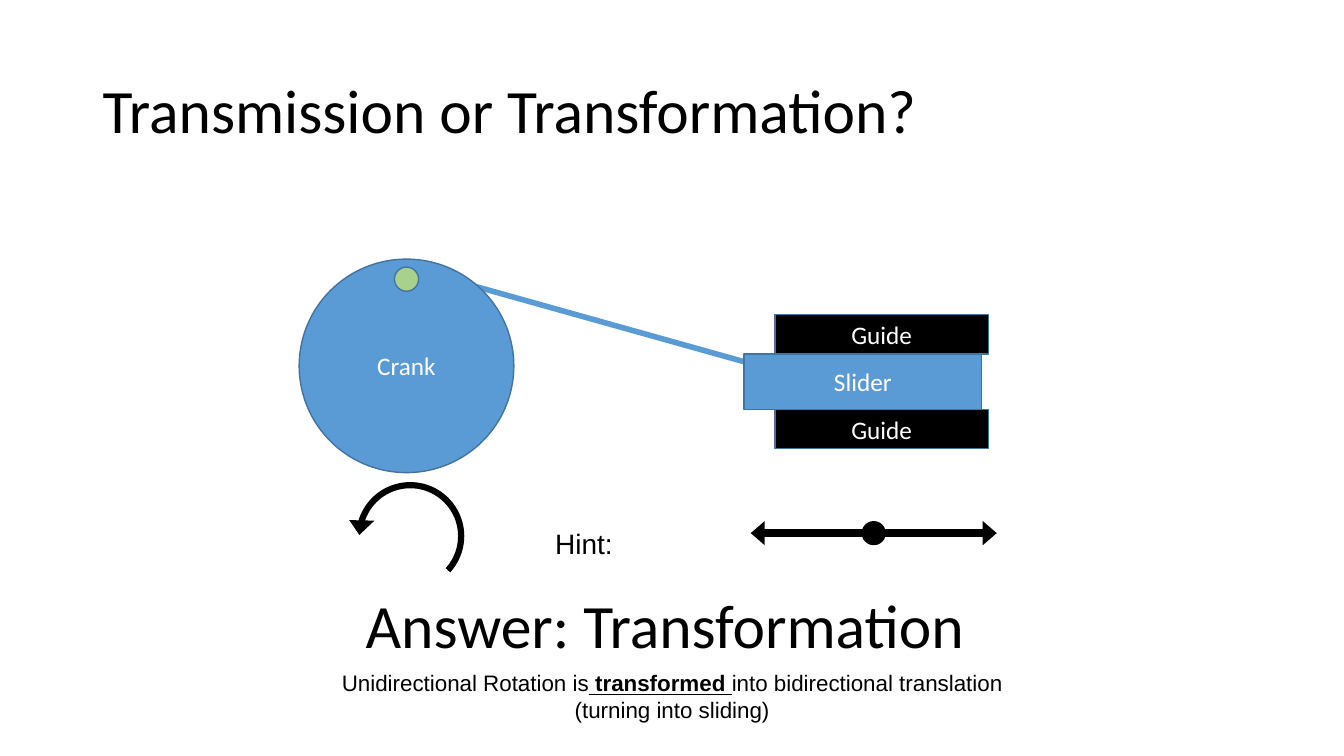
from lxml.etree import SubElement
from pptx import Presentation
from pptx.dml.color import RGBColor
from pptx.enum.shapes import MSO_CONNECTOR as Link, MSO_SHAPE as Kind
from pptx.enum.text import MSO_ANCHOR as Anchor, PP_ALIGN as Align
from pptx.oxml.ns import qn
from pptx.util import Cm, Pt

HUES = {"blue": "5B9BD5", "edge": "43739E", "green": "A9D18E",
        "black": "000000", "white": "FFFFFF"}
DOT = 0.61


def hue(name):
    return RGBColor.from_string(HUES[name])


def style(para, size, face, color="black", align=Align.CENTER):
    para.alignment = align
    para.font.size = Pt(size)
    para.font.name = face
    para.font.color.rgb = hue(color)


def shape(slide, kind, box, fill, edge=None, label=None, adjust=()):
    item = slide.shapes.add_shape(kind, *map(Cm, box))
    item.shadow.inherit = False
    item.fill.solid()
    item.fill.fore_color.rgb = hue(fill)
    if edge:
        item.line.color.rgb = hue(edge)
        item.line.width = Pt(1)
    else:
        item.line.fill.background()
    for i, value in enumerate(adjust):
        item.adjustments[i] = value
    if label:
        frame = item.text_frame
        frame.vertical_anchor = Anchor.MIDDLE
        frame.text = label
        style(frame.paragraphs[0], 18, "Calibri", "white")
    return item


def text(slide, box, words, size, face, align=Align.CENTER,
         anchor=Anchor.MIDDLE, wrap=True):
    frame = slide.shapes.add_textbox(*map(Cm, box)).text_frame
    frame.word_wrap = wrap
    frame.vertical_anchor = anchor
    frame.text = words
    for para in frame.paragraphs:
        style(para, size, face, align=align)
    return frame


def title(slide, box):
    frame = text(slide, box, "Transmission or Transformation?", 44,
                 "Calibri", Align.LEFT)
    frame.paragraphs[0].line_spacing = 0.9


def rod(slide, box):
    """Draw the rod down the diagonal of the box."""
    x, y, w, h = box
    line = slide.shapes.add_connector(
        Link.STRAIGHT, Cm(x), Cm(y), Cm(x + w), Cm(y + h))
    line.line.color.rgb = hue("blue")
    line.line.width = Pt(4)
    SubElement(line._element.spPr, qn("a:effectLst"))


def crank(slide, box):
    """Draw the wheel with its pin near the top."""
    x, y, w, h = box
    shape(slide, Kind.OVAL, box, "blue", "edge", "Crank")
    pin = (x + (w - DOT) / 2, y + 0.2, DOT, DOT)
    shape(slide, Kind.OVAL, pin, "green", "edge")


def slider(slide, box):
    """Draw the slider between two guides, over a white field."""
    x, y, w, h = box
    field = (x + 1.77, y - 2.6, 8.41, 7.39)
    shape(slide, Kind.RECTANGLE, field, "white")
    shape(slide, Kind.RECTANGLE, box, "blue", "edge", "Slider")
    deep = 0.99
    for top in (y - deep, y + h):
        shape(slide, Kind.RECTANGLE, (x + 0.78, top, 5.38, deep),
              "black", "edge", "Guide")


def turn(slide, box):
    arrow = shape(slide, Kind.CIRCULAR_ARROW, box, "black",
                  adjust=(0.049, 10.007, 205.217, 82.682, 0.099))
    arrow._element.spPr.xfrm.set("flipH", "1")


def travel(slide, box):
    """Draw the two-way arrow with a dot at its centre."""
    x, y, w, h = box
    shape(slide, Kind.LEFT_RIGHT_ARROW, box, "black", adjust=(0.321, 0.579))
    shape(slide, Kind.OVAL, (x + (w - h) / 2, y, h, h), "black")


def answer(slide, box):
    """Write the answer with its reason below."""
    x, y, w, h = box
    text(slide, (x, y, w, 2.79), "Answer: Transformation", 44, "Calibri")
    note = (x + 2.21, y + 2.41, 18.8, h - 2.41)
    frame = text(slide, note, "\n(turning into sliding)", 16, "Arial",
                 anchor=Anchor.TOP)
    first = frame.paragraphs[0]
    for words, strong in (("Unidirectional Rotation is", False),
                          (" transformed ", True),
                          ("into bidirectional translation", False)):
        run = first.add_run()
        run.text = words
        if strong:
            run.font.bold = run.font.underline = True


def main():
    deck = Presentation()
    deck.slide_width, deck.slide_height = Cm(33.87), Cm(19.05)
    slide = deck.slides.add_slide(deck.slide_layouts[6])
    title(slide, (2.34, 1.02, 29.21, 3.68))
    rod(slide, (10.24, 6.73, 18.49, 5.18))
    crank(slide, (7.54, 6.53, 5.41, 5.38))
    slider(slide, (18.75, 8.92, 5.99, 1.4))
    answer(slide, (5.33, 14.33, 22.86, 4.04))
    turn(slide, (8.74, 11.91, 3.2, 3.2))
    travel(slide, (18.92, 13.13, 6.2, DOT))
    text(slide, (13.74, 13.13, 1.98, 1.12), "Hint:", 20, "Arial",
         Align.LEFT, Anchor.TOP, False)
    deck.save("out.pptx")


if __name__ == "__main__":
    main()
